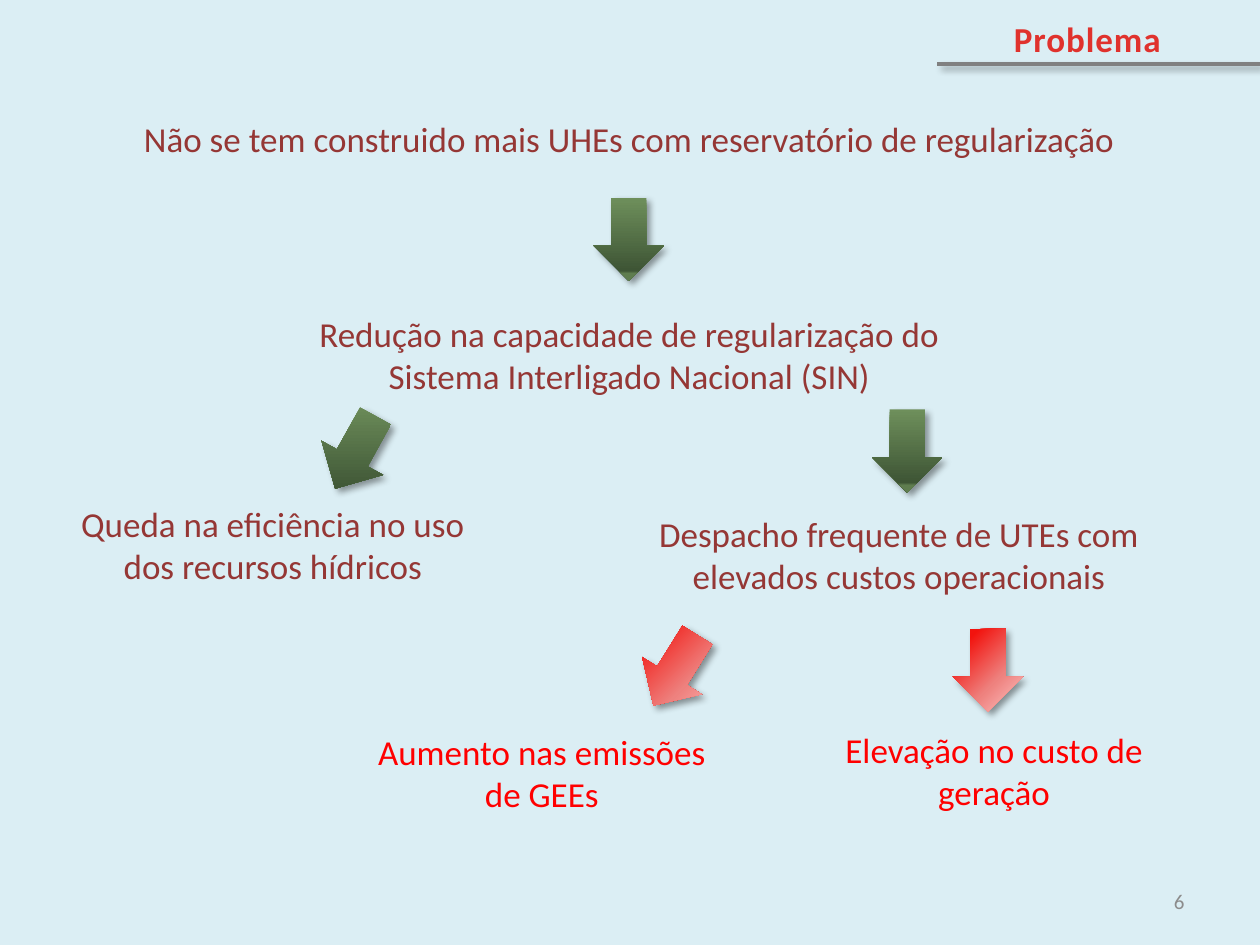
from lxml.etree import SubElement
from pptx import Presentation
from pptx.dml.color import RGBColor
from pptx.enum.shapes import MSO_CONNECTOR, MSO_SHAPE
from pptx.enum.text import MSO_ANCHOR, PP_ALIGN
from pptx.oxml import parse_xml
from pptx.oxml.ns import nsdecls, qn
from pptx.util import Inches, Pt

COLORS = {
    "background": "DBEEF4",
    "cause": "953735",
    "outcome": "FF0000",
    "title": "E0322D",
    "rule": "808080",
    "number": "8C8C8C",
    "shadow": "000000",
}
# Gradient stops in percent, and the direction in which they run
GRADIENTS = {
    "green": ([(0, "6E8F5B"), (88, "3E5535"), (91, "5F7D4F")],
              '<a:lin ang="5400000" scaled="0"/>'),
    "red": ([(11, "FAB2B0"), (38, "EE817E"), (83, "F2130E")],
            '<a:path path="circle"><a:fillToRect l="100000" t="100000"/></a:path>'),
}
# Text, left, top, width, height, color
STATEMENTS = [
    ("Não se tem construido mais UHEs com reservatório de regularização",
     0.56, 0.88, 8.87, 0.44, "cause"),
    ("Redução na capacidade de regularização do Sistema Interligado Nacional (SIN)",
     2.01, 2.43, 5.97, 0.77, "cause"),
    ("Queda na eficiência no uso dos recursos hídricos",
     0.32, 3.94, 3.69, 0.77, "cause"),
    ("Despacho frequente de UTEs com elevados custos operacionais",
     4.85, 4.02, 4.57, 0.77, "cause"),
    ("Aumento nas emissões de GEEs", 2.74, 5.75, 3.12, 0.77, "outcome"),
    ("Elevação no custo de geração", 6.44, 5.73, 2.9, 0.77, "outcome"),
]
# Left, top, rotation, gradient
ARROWS = [
    (4.66, 1.62, 90, "green"),
    (2.49, 3.31, 119, "green"),
    (6.87, 3.3, 90, "green"),
    (5.03, 5.04, 121.9, "red"),
    (7.51, 5.04, 90, "red"),
]
ARROW_WIDTH, ARROW_HEIGHT = 0.66, 0.56


def rgb(name):
    return RGBColor.from_string(COLORS[name])


def add_shadow(shape):
    """Soft shadow falling to the lower right."""
    shape._element.spPr.append(parse_xml(
        f'<a:effectLst {nsdecls("a")}>'
        f'<a:outerShdw blurRad="{Pt(4)}" dist="{Pt(3)}" dir="2700000" algn="tl" '
        f'rotWithShape="0"><a:srgbClr val="{COLORS["shadow"]}">'
        '<a:alpha val="40000"/></a:srgbClr></a:outerShdw></a:effectLst>'))


def add_text(slide, text, left, top, width, height, color, size=20,
             align=PP_ALIGN.CENTER, anchor=MSO_ANCHOR.TOP):
    box = slide.shapes.add_textbox(Inches(left), Inches(top), Inches(width), Inches(height))
    frame = box.text_frame
    frame.word_wrap = True
    frame.vertical_anchor = anchor
    paragraph = frame.paragraphs[0]
    paragraph.text = text
    paragraph.alignment = align
    paragraph.font.name = "Calibri"
    paragraph.font.size = Pt(size)
    paragraph.font.color.rgb = rgb(color)
    return paragraph


def add_arrow(slide, left, top, rotation, gradient):
    arrow = slide.shapes.add_shape(
        MSO_SHAPE.RIGHT_ARROW, Inches(left), Inches(top),
        Inches(ARROW_WIDTH), Inches(ARROW_HEIGHT))
    arrow.rotation = rotation
    arrow.line.fill.background()
    stops, direction = GRADIENTS[gradient]
    stop_xml = "".join(
        f'<a:gs pos="{position * 1000}"><a:srgbClr val="{color}"/></a:gs>'
        for position, color in stops)
    # The gradient keeps its direction while the arrow turns
    arrow._element.spPr.find(qn("a:prstGeom")).addnext(parse_xml(
        f'<a:gradFill {nsdecls("a")} rotWithShape="0">'
        f'<a:gsLst>{stop_xml}</a:gsLst>{direction}</a:gradFill>'))
    add_shadow(arrow)


def add_header(slide, left, top, width):
    """Section title above a shadowed rule that runs to the slide edge."""
    title = add_text(slide, "Problema", left + 0.26, top, 1.86, 0.44, "title")
    title.font.bold = True
    title.runs[0].font._element.set("spc", "50")
    rule_top = Inches(top + 0.42)
    rule = slide.shapes.add_connector(
        MSO_CONNECTOR.STRAIGHT, Inches(left), rule_top, Inches(left + width), rule_top)
    rule.line.color.rgb = rgb("rule")
    rule.line.width = Pt(2)
    add_shadow(rule)


def add_cause_tree(slide):
    for statement in STATEMENTS:
        add_text(slide, *statement)
    for arrow in ARROWS:
        add_arrow(slide, *arrow)


def add_slide_number(slide, left, top, width, height):
    paragraph = add_text(slide, "", left, top, width, height, "number", size=12,
                         align=PP_ALIGN.RIGHT, anchor=MSO_ANCHOR.MIDDLE)
    field = parse_xml(
        f'<a:fld {nsdecls("a")} id="{{B6F15528-21DE-4FAA-801E-634DDDAF4B2B}}" '
        'type="slidenum"><a:rPr lang="pt-BR"/></a:fld>')
    SubElement(field, qn("a:t")).text = "6"
    paragraph._p.get_or_add_pPr().addnext(field)


def main():
    presentation = Presentation()
    presentation.slide_width = Inches(10)
    presentation.slide_height = Inches(7.5)
    # The deck numbering makes this slide the sixth
    presentation.element.set("firstSlideNum", "6")
    slide = presentation.slides.add_slide(presentation.slide_layouts[6])
    slide.background.fill.solid()
    slide.background.fill.fore_color.rgb = rgb("background")

    add_header(slide, 7.44, 0.09, 2.56)
    add_cause_tree(slide)
    add_slide_number(slide, 7.17, 6.95, 2.33, 0.4)
    presentation.save("out.pptx")


if __name__ == "__main__":
    main()
